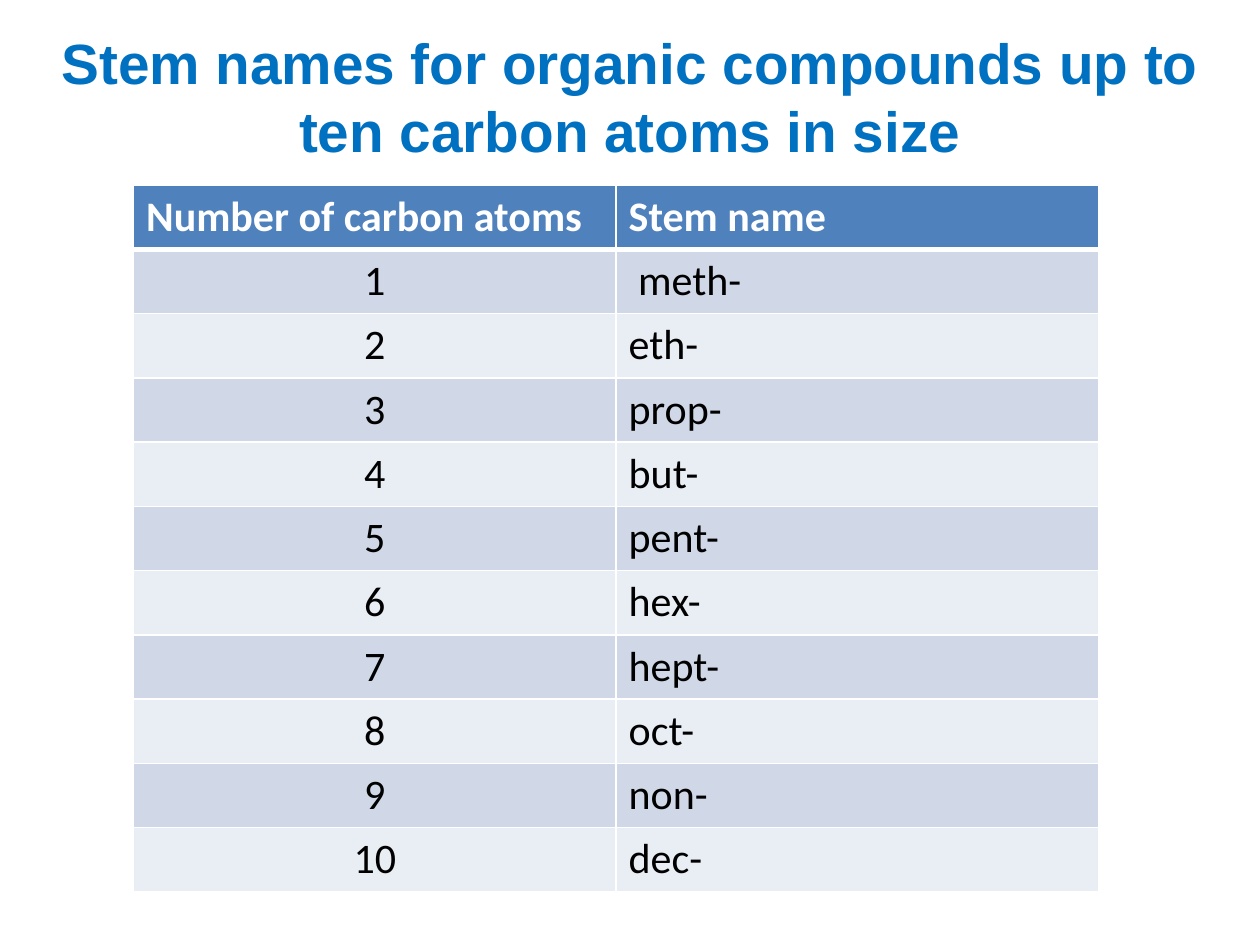
from dataclasses import dataclass

from lxml import etree
from pptx import Presentation
from pptx.dml.color import RGBColor
from pptx.enum.text import MSO_ANCHOR, PP_ALIGN
from pptx.oxml.ns import qn
from pptx.util import Inches, Pt

MIDDLE = MSO_ANCHOR.MIDDLE
LEFT = PP_ALIGN.LEFT
CENTER = PP_ALIGN.CENTER
BLANK_LAYOUT = 6


@dataclass(frozen=True)
class Theme:
    title_color: str = "0070C0"
    header_fill: str = "4F81BD"
    header_color: str = "FFFFFF"
    body_color: str = "000000"
    band_fills: tuple = ("D0D8E8", "E9EDF4")
    border_color: str = "FFFFFF"
    border_width: int = 1
    header_border_width: int = 3
    title_font: str = "Arial"
    table_font: str = "Calibri"
    title_size: float = 32.4
    table_size: int = 24


THEME = Theme()
TITLE = "Stem names for organic compounds up to ten carbon atoms in size"
HEADERS = ("Number of carbon atoms", "Stem name")
STEMS = (" meth-", "eth-", "prop-", "but-", "pent-",
         "hex-", "hept-", "oct-", "non-", "dec-")


def write_text(text_frame, text, font_name, size, color, bold, alignment):
    paragraph = text_frame.paragraphs[0]
    paragraph.alignment = alignment
    run = paragraph.add_run()
    run.text = text
    run.font.name = font_name
    run.font.size = Pt(size)
    run.font.bold = bold
    run.font.color.rgb = RGBColor.from_string(color)


def add_title(slide):
    title = slide.shapes.add_textbox(
        Inches(0.12), Inches(0.13), Inches(9.76), Inches(1.26))
    text_frame = title.text_frame
    text_frame.word_wrap = True
    text_frame.vertical_anchor = MIDDLE
    write_text(text_frame, TITLE, THEME.title_font, THEME.title_size,
               THEME.title_color, True, CENTER)


def set_borders(cell, top_width, bottom_width):
    properties = cell._tc.get_or_add_tcPr()
    widths = {"a:lnL": THEME.border_width, "a:lnR": THEME.border_width,
              "a:lnT": top_width, "a:lnB": bottom_width}
    for position, (tag, width) in enumerate(widths.items()):
        line = etree.Element(qn(tag), w=str(Pt(width)))
        fill = etree.SubElement(line, qn("a:solidFill"))
        etree.SubElement(fill, qn("a:srgbClr"), val=THEME.border_color)
        properties.insert(position, line)


def fill_cell(cell, text, row, alignment):
    is_header = row == 0
    fill = THEME.header_fill if is_header else THEME.band_fills[(row - 1) % 2]
    color = THEME.header_color if is_header else THEME.body_color
    cell.fill.solid()
    cell.fill.fore_color.rgb = RGBColor.from_string(fill)
    write_text(cell.text_frame, text, THEME.table_font, THEME.table_size,
               color, is_header, alignment)
    top_width = THEME.header_border_width if row == 1 else THEME.border_width
    bottom_width = THEME.header_border_width if is_header else THEME.border_width
    set_borders(cell, top_width, bottom_width)


def add_stem_table(slide):
    rows = [HEADERS] + [(str(count), stem) for count, stem in enumerate(STEMS, 1)]
    table = slide.shapes.add_table(
        len(rows), len(HEADERS),
        Inches(1.06), Inches(1.47), Inches(7.66), Inches(5.61)).table
    for row, texts in enumerate(rows):
        for column, text in enumerate(texts):
            alignment = CENTER if row > 0 and column == 0 else LEFT
            fill_cell(table.cell(row, column), text, row, alignment)


def main():
    presentation = Presentation()
    presentation.slide_width = Inches(10)
    presentation.slide_height = Inches(7.5)
    slide = presentation.slides.add_slide(presentation.slide_layouts[BLANK_LAYOUT])
    add_title(slide)
    add_stem_table(slide)
    presentation.save("out.pptx")


main()
